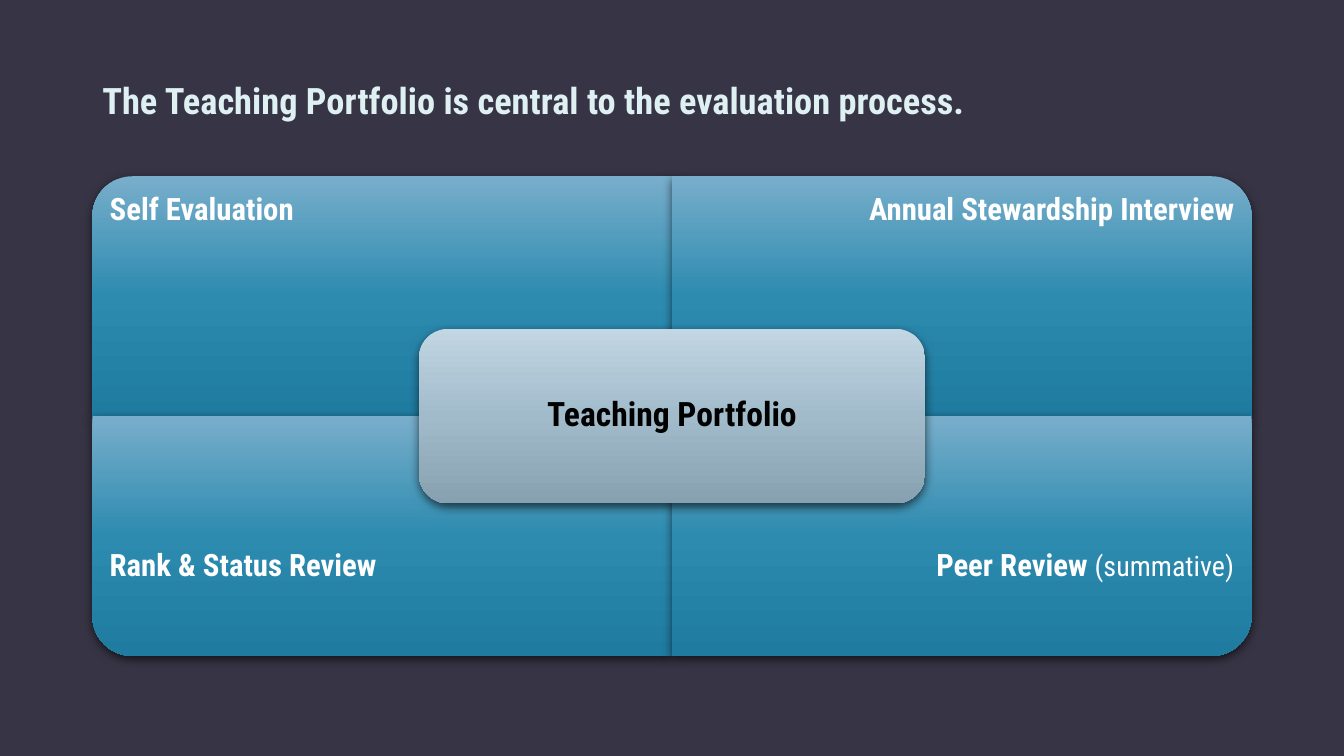
from copy import deepcopy
from dataclasses import dataclass

from pptx import Presentation, oxml, util as u
from pptx.dml.color import RGBColor
from pptx.enum import shapes, text
from pptx.oxml import ns

FONT = "Roboto Condensed"
COLORS = {
    "background": "373545",
    "title": "DEF0F2",
    "quadrant_text": "FFFFFF",
    "center_text": "000000",
}
QUADRANT_GRADIENT = ("78AECB", "2D8BB0", "1F7BA0")
CENTER_GRADIENT = ("C2D6E3", "A1BBCB", "88A1B1")
SLIDE_WIDTH, SLIDE_HEIGHT = 960, 540
CENTER_X, CENTER_Y = 480, 297.2
QUADRANT_WIDTH, QUADRANT_HEIGHT, CORNER_RADIUS = 414, 171.3, 28.5
CENTER_WIDTH, CENTER_HEIGHT = 361.4, 124.6
EDGE_INSET, INNER_INSET = 12.4, 55.4
ARC_HANDLE = 0.55


@dataclass
class Phrase:
    wording: str
    size: float = 22
    bold: bool = True


@dataclass
class Quadrant:
    horizontal: int
    vertical: int
    phrases: list[Phrase]


QUADRANTS = [
    Quadrant(-1, -1, [Phrase("Self Evaluation")]),
    Quadrant(1, -1, [Phrase("Annual Stewardship Interview")]),
    Quadrant(-1, 1, [Phrase("Rank & Status Review")]),
    Quadrant(1, 1, [Phrase("Peer Review "), Phrase("(summative)", 20, False)]),
]


def style_panel(shape, gradient: tuple[str, ...]) -> None:
    shape.line.fill.background()
    shape.fill.gradient()
    shape.fill.gradient_angle = 270
    stop_list = shape.element.spPr.find(".//" + ns.qn("a:gsLst"))
    stop_list.insert(1, deepcopy(stop_list[0]))
    for index, (stop, color) in enumerate(zip(shape.fill.gradient_stops, gradient)):
        stop.position = index / 2
        stop.color.rgb = RGBColor.from_string(color)
    shape.shadow.inherit = False
    effects = shape.element.spPr.find(ns.qn("a:effectLst"))
    effects.append(oxml.parse_xml(
        f'<a:outerShdw {ns.nsdecls("a")} blurRad="{u.Pt(7)}" dist="{u.Pt(2.2)}" '
        'dir="5400000" algn="ctr" rotWithShape="0"><a:srgbClr val="000000">'
        '<a:alpha val="63000"/></a:srgbClr></a:outerShdw>'))


def write_text(shape, phrases: list[Phrase], color: str, alignment, anchor,
               insets: tuple[float, float, float, float], line_spacing: float = 0.9) -> None:
    frame = shape.text_frame
    frame.word_wrap = True
    frame.vertical_anchor = anchor
    frame.margin_left, frame.margin_top, frame.margin_right, frame.margin_bottom = map(u.Pt, insets)
    paragraph = frame.paragraphs[0]
    paragraph.alignment = alignment
    paragraph.line_spacing = line_spacing
    for phrase in phrases:
        run = paragraph.add_run()
        run.text = phrase.wording
        run.font.name = FONT
        run.font.size = u.Pt(phrase.size)
        run.font.bold = phrase.bold
        run.font.color.rgb = RGBColor.from_string(color)


def round_corner(shape, segment_index: int) -> None:
    segments = shape.element.spPr.findall(".//" + ns.qn("a:lnTo"))
    (start_x, start_y), (end_x, end_y) = [
        (int(segment[0].get("x")), int(segment[0].get("y")))
        for segment in segments[segment_index - 1:segment_index + 1]]
    curve_points = [
        (start_x, start_y + round(ARC_HANDLE * (end_y - start_y))),
        (end_x + round(ARC_HANDLE * (start_x - end_x)), end_y),
        (end_x, end_y),
    ]
    points_xml = "".join(f'<a:pt x="{x}" y="{y}"/>' for x, y in curve_points)
    curve = oxml.parse_xml(f'<a:cubicBezTo {ns.nsdecls("a")}>{points_xml}</a:cubicBezTo>')
    straight = segments[segment_index]
    straight.getparent().replace(straight, curve)


def draw_quadrant(slide, quadrant: Quadrant) -> None:
    def point(across: float, down: float) -> tuple[int, int]:
        return (u.Pt(CENTER_X + quadrant.horizontal * across),
                u.Pt(CENTER_Y + quadrant.vertical * down))

    builder = slide.shapes.build_freeform(*point(0, 0), scale=1.0)
    builder.add_line_segments([
        point(QUADRANT_WIDTH, 0),
        point(QUADRANT_WIDTH, QUADRANT_HEIGHT - CORNER_RADIUS),
        point(QUADRANT_WIDTH - CORNER_RADIUS, QUADRANT_HEIGHT),
        point(0, QUADRANT_HEIGHT),
    ])
    shape = builder.convert_to_shape()
    round_corner(shape, 2)
    style_panel(shape, QUADRANT_GRADIENT)
    is_upper = quadrant.vertical < 0
    write_text(
        shape, quadrant.phrases, COLORS["quadrant_text"],
        text.PP_ALIGN.LEFT if quadrant.horizontal < 0 else text.PP_ALIGN.RIGHT,
        text.MSO_ANCHOR.TOP if is_upper else text.MSO_ANCHOR.MIDDLE,
        (EDGE_INSET, EDGE_INSET if is_upper else INNER_INSET,
         EDGE_INSET, INNER_INSET if is_upper else EDGE_INSET))


def draw_center(slide) -> None:
    shape = slide.shapes.add_shape(
        shapes.MSO_SHAPE.ROUNDED_RECTANGLE,
        u.Pt(CENTER_X - CENTER_WIDTH / 2), u.Pt(CENTER_Y - CENTER_HEIGHT / 2),
        u.Pt(CENTER_WIDTH), u.Pt(CENTER_HEIGHT))
    style_panel(shape, CENTER_GRADIENT)
    write_text(shape, [Phrase("Teaching Portfolio", 24)], COLORS["center_text"],
               text.PP_ALIGN.CENTER, text.MSO_ANCHOR.MIDDLE, (13, 13, 13, 13))


def draw_title(slide) -> None:
    box = slide.shapes.add_textbox(u.Pt(66), u.Pt(52.56), u.Pt(728.64), u.Pt(38.88))
    write_text(box, [Phrase("The Teaching Portfolio is central to the evaluation process.", 26)],
               COLORS["title"], text.PP_ALIGN.LEFT, text.MSO_ANCHOR.TOP, (7.2, 3.6, 7.2, 3.6), 1.0)
    box.text_frame.auto_size = text.MSO_AUTO_SIZE.SHAPE_TO_FIT_TEXT


def main() -> None:
    presentation = Presentation()
    presentation.slide_width = u.Pt(SLIDE_WIDTH)
    presentation.slide_height = u.Pt(SLIDE_HEIGHT)
    slide = presentation.slides.add_slide(presentation.slide_layouts[6])
    slide.background.fill.solid()
    slide.background.fill.fore_color.rgb = RGBColor.from_string(COLORS["background"])
    for quadrant in QUADRANTS:
        draw_quadrant(slide, quadrant)
    draw_center(slide)
    draw_title(slide)
    presentation.save("out.pptx")


if __name__ == "__main__":
    main()
